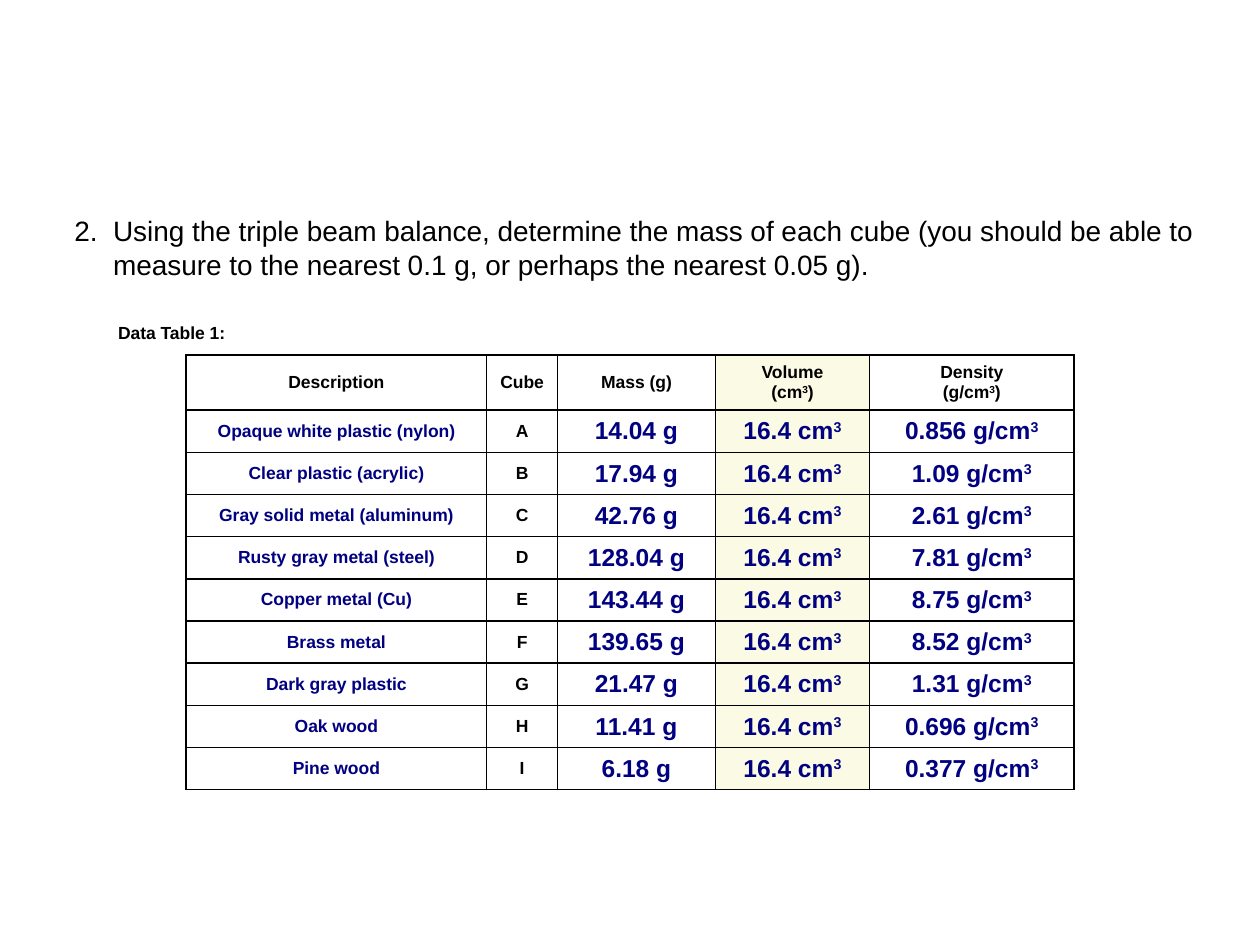
from lxml import etree
from pptx import Presentation
from pptx import util as u
from pptx.dml import color
from pptx.enum import text
from pptx.oxml import ns

COLORS = {"ink": "000000", "answer": "000080", "volume": "FBFAE5"}
FONT = "Arial"
CUBE_VOLUME = "16.4 cm^3"
HEADINGS = ["Description", "Cube", "Mass (g)", "Volume\n(cm^3)", "Density\n(g/cm^3)"]
CUBES = [
    ("Opaque white plastic (nylon)", "A", "14.04", "0.856"),
    ("Clear plastic (acrylic)", "B", "17.94", "1.09"),
    ("Gray solid metal (aluminum)", "C", "42.76", "2.61"),
    ("Rusty gray metal (steel)", "D", "128.04", "7.81"),
    ("Copper metal (Cu)", "E", "143.44", "8.75"),
    ("Brass metal", "F", "139.65", "8.52"),
    ("Dark gray plastic", "G", "21.47", "1.31"),
    ("Oak wood", "H", "11.41", "0.696"),
    ("Pine wood", "I", "6.18", "0.377"),
]
COLUMN_WIDTHS = [6.06, 1.43, 3.18, 3.11, 4.12]
HEADER_HEIGHT, ROW_HEIGHT = 1.11, 0.85
VOLUME_COLUMN = 3


def rgb(name):
    return color.RGBColor.from_string(COLORS[name])


def style_run(run, size, ink="ink", bold=False):
    run.font.name = FONT
    run.font.size = u.Pt(size)
    run.font.bold = bold
    run.font.color.rgb = rgb(ink)


def add_instruction(slide, left, top, width, height):
    frame = slide.shapes.add_textbox(u.Cm(left), u.Cm(top), u.Cm(width), u.Cm(height)).text_frame
    frame.word_wrap = True
    frame.vertical_anchor = text.MSO_ANCHOR.TOP
    frame.text = (
        "2.\tUsing the triple beam balance, determine the mass of each cube "
        "(you should be able to measure to the nearest 0.1 g, or perhaps the nearest 0.05 g).\n"
        "Data Table 1:"
    )
    step, caption = frame.paragraphs
    for paragraph, size, margin, indent in ((step, 16, 0.78, -0.78), (caption, 10, 0.88, 0)):
        paragraph.line_spacing = 1.02
        properties = paragraph._p.get_or_add_pPr()
        properties.set("marL", str(u.Cm(margin)))
        properties.set("indent", str(u.Cm(indent)))
        style_run(paragraph.runs[0], size, bold=paragraph is caption)
    caption.space_before = u.Pt(23)


def set_borders(cell):
    properties = cell._tc.get_or_add_tcPr()
    for side in ("a:lnL", "a:lnR", "a:lnT", "a:lnB"):
        line = etree.SubElement(properties, ns.qn(side), w=str(u.Pt(1)))
        fill = etree.SubElement(line, ns.qn("a:solidFill"))
        etree.SubElement(fill, ns.qn("a:srgbClr"), val=COLORS["ink"])


def write_cell(cell, content, size, ink):
    """Centre the content in the cell; ^3 becomes a superscript 3."""
    cell.vertical_anchor = text.MSO_ANCHOR.MIDDLE
    cell.text_frame.text = content.replace("^3", "")
    for paragraph, words in zip(cell.text_frame.paragraphs, content.split("\n")):
        paragraph.alignment = text.PP_ALIGN.CENTER
        before, power, after = words.partition("^3")
        paragraph.runs[0].text = before
        if power:
            exponent = paragraph.add_run()
            exponent.text = "3"
            exponent._r.get_or_add_rPr().set("baseline", "30000")
        if after:
            paragraph.add_run().text = after
        for run in paragraph.runs:
            style_run(run, size, ink, bold=True)


def add_density_table(slide, left, top):
    rows = [HEADINGS] + [
        (description, cube, f"{mass} g", CUBE_VOLUME, f"{density} g/cm^3")
        for description, cube, mass, density in CUBES
    ]
    height = HEADER_HEIGHT + ROW_HEIGHT * len(CUBES)
    table = slide.shapes.add_table(
        len(rows), len(HEADINGS),
        u.Cm(left), u.Cm(top), u.Cm(sum(COLUMN_WIDTHS)), u.Cm(height),
    ).table
    table.first_row = table.horz_banding = False
    for column, width in zip(table.columns, COLUMN_WIDTHS):
        column.width = u.Cm(width)
    for r, contents in enumerate(rows):
        table.rows[r].height = u.Cm(ROW_HEIGHT if r else HEADER_HEIGHT)
        for c, content in enumerate(contents):
            cell = table.cell(r, c)
            set_borders(cell)
            if c == VOLUME_COLUMN:
                cell.fill.solid()
                cell.fill.fore_color.rgb = rgb("volume")
            else:
                cell.fill.background()
            size = 14 if r and c >= 2 else 10
            write_cell(cell, content, size, "answer" if r and c != 1 else "ink")


def main():
    deck = Presentation()
    deck.slide_width, deck.slide_height = u.Cm(25.4), u.Cm(19.05)
    slide = deck.slides.add_slide(deck.slide_layouts[6])
    add_instruction(slide, 1.25, 4.16, 23.3, 3.66)
    add_density_table(slide, 3.75, 7.16)
    deck.save("out.pptx")


if __name__ == "__main__":
    main()
